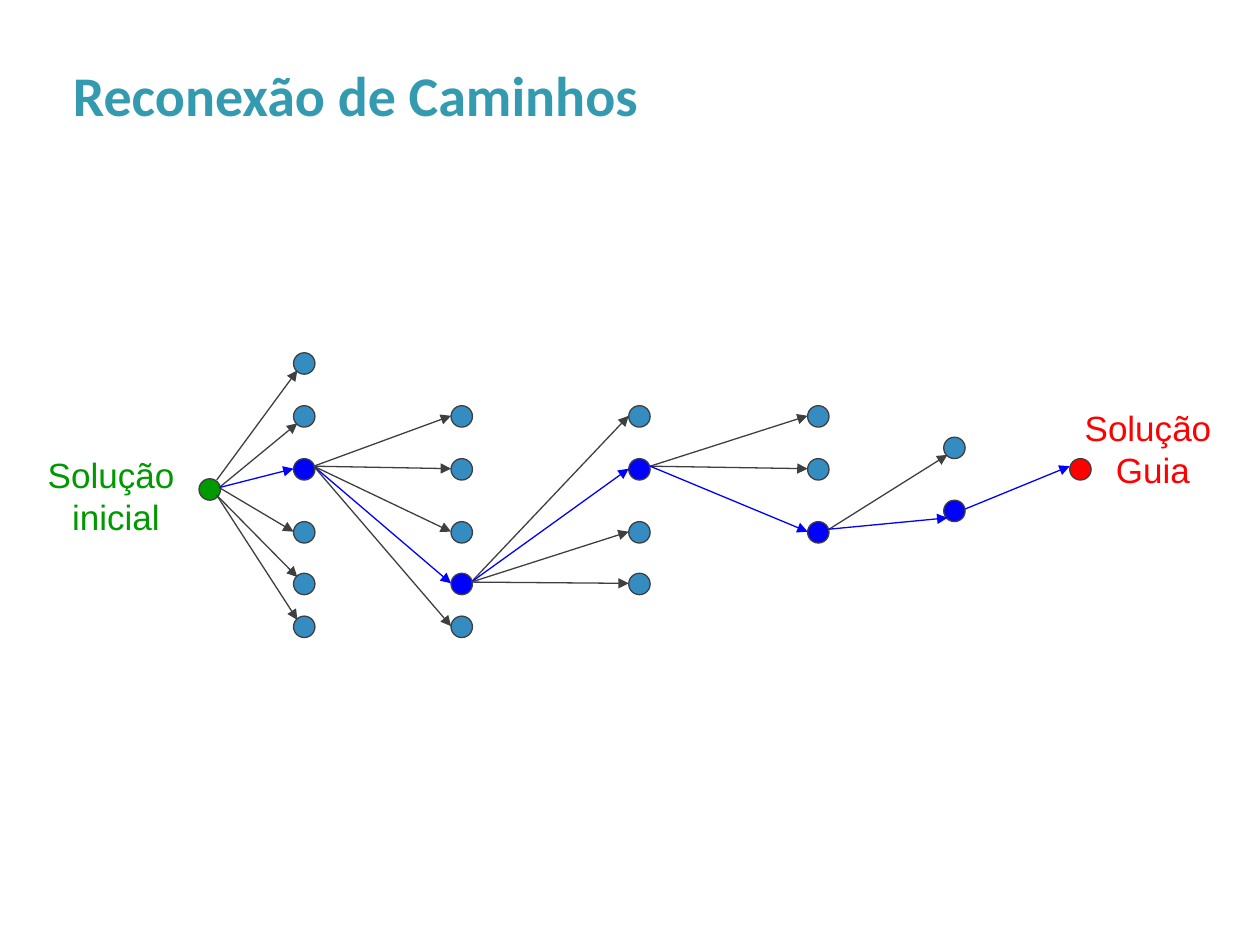
"""Build the path relinking slide."""
from lxml.etree import SubElement
from pptx import Presentation
from pptx.dml.color import RGBColor
from pptx.enum.shapes import MSO_CONNECTOR as Conn, MSO_SHAPE as Shape
from pptx.enum.text import MSO_ANCHOR as Anchor, PP_ALIGN as Align
from pptx.oxml.ns import qn
from pptx.util import Inches, Pt

TEAL = RGBColor(0x33, 0x9A, 0xAF)
GREEN = RGBColor(0x00, 0x99, 0x00)
SKY = RGBColor(0x35, 0x8C, 0xC1)
BLUE = RGBColor(0x00, 0x00, 0xFF)
RED = RGBColor(0xFF, 0x00, 0x00)
GRAY = RGBColor(0x3D, 0x3F, 0x41)

SIZE = 0.17
LEFT, LOW, HIGH, NEAR = (0, 0.08), (0.03, 0.14), (0.03, 0.03), (0, 0.06)
ROOT, ROOT_UP, ROOT_DOWN = (1.74, 3.87), (1.72, 3.81), (1.72, 3.93)


def fan(start, *tops, side=LEFT):
    """Give branches that share a start point and an end side."""
    return [(start, top, side) for top in tops]


STAGES = [
    (2.33, 3.64, fan(ROOT_UP, 2.8, side=LOW) + fan(ROOT, 3.22, side=LOW)
     + fan(ROOT, 3.64, 4.14) + fan(ROOT_DOWN, 4.55, 4.89, side=HIGH)),
    (3.58, 4.55, fan((2.49, 3.7), 3.22, 3.64, 4.14, 4.55, 4.89)),
    (4.99, 3.64, fan((3.74, 4.62), 3.22, 3.64, 4.14, 4.55)),
    (6.41, 4.14, fan((5.16, 3.7), 3.22, 3.64, 4.14)),
    (7.49, 3.97, fan((6.58, 4.2), 3.47, 3.97, side=LOW)),
]


def text(slide, lines, box, size=20, font="Arial", color=GRAY, bold=False,
         align=Align.CENTER, anchor=Anchor.TOP, wrap=False, space=None):
    """Add a text box with one paragraph per line."""
    frame = slide.shapes.add_textbox(*map(Inches, box)).text_frame
    frame.word_wrap = wrap
    frame.vertical_anchor = anchor
    frame.text = "\n".join(lines)
    for para in frame.paragraphs:
        para.alignment = align
        para.line_spacing = space
        face = para.runs[0].font
        face.name, face.size, face.bold = font, Pt(size), bold
        face.color.rgb = color


def node(shapes, x, y, color):
    """Add a round solution node."""
    dot = shapes.add_shape(Shape.OVAL, *map(Inches, (x, y, SIZE, SIZE)))
    dot.shadow.inherit = False
    dot.fill.solid()
    dot.fill.fore_color.rgb = color
    dot.line.color.rgb = GRAY
    dot.line.width = Pt(0.75)


def arrow(shapes, start, end, color):
    """Add a straight arrow."""
    link = shapes.add_connector(Conn.STRAIGHT, *map(Inches, start + end))
    link.line.color.rgb = color
    link.line.width = Pt(0.75)
    SubElement(link.line._get_or_add_ln(), qn("a:tailEnd"), type="triangle")
    SubElement(link._element.spPr, qn("a:effectLst"))


def stage(slide, x, best, rows):
    """Add a group of neighbours and the arrows that reach them."""
    shapes = slide.shapes.add_group_shape().shapes
    for _, y, _ in rows:
        node(shapes, x, y, BLUE if y == best else SKY)
    for start, y, (dx, dy) in rows:
        arrow(shapes, start, (x + dx, y + dy), BLUE if y == best else GRAY)


def main():
    """Build and save the slide."""
    deck = Presentation()
    deck.slide_width, deck.slide_height = Inches(10), Inches(7.5)
    slide = deck.slides.add_slide(deck.slide_layouts[6])
    text(slide, ["Reconexão de Caminhos"], (0.48, 0.3, 9.05, 0.77), size=32,
         font="Calibri", color=TEAL, bold=True, align=Align.LEFT,
         anchor=Anchor.BOTTOM, wrap=True, space=0.9)
    node(slide.shapes, 1.58, 3.8, GREEN)
    for x, best, rows in STAGES:
        stage(slide, x, best, rows)
    goal = (8.49, 3.64)
    node(slide.shapes, *goal, RED)
    arrow(slide.shapes, (7.66, 4.04), (goal[0] + NEAR[0], goal[1] + NEAR[1]), BLUE)
    text(slide, ["Solução ", "inicial"], (0.28, 3.55, 1.28, 0.77), color=GREEN)
    text(slide, ["Solução ", "Guia"], (8.51, 3.18, 1.28, 1.1), color=RED)
    deck.save("out.pptx")


if __name__ == "__main__":
    main()
